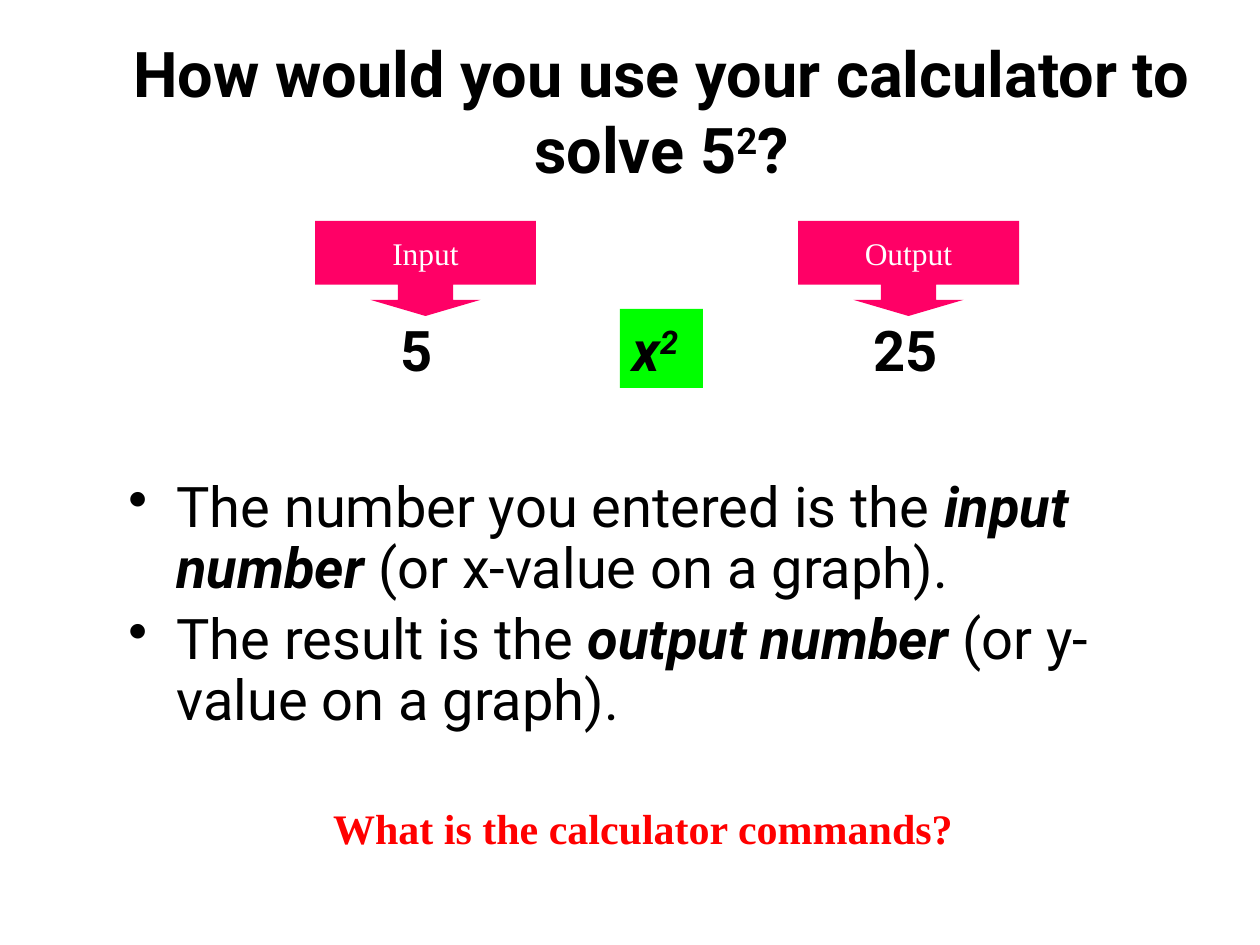
import dataclasses

import lxml.etree
import pptx
import pptx.dml.color
import pptx.enum.shapes
import pptx.enum.text
import pptx.oxml.ns
import pptx.util


@dataclasses.dataclass(frozen=True)
class Theme:
    black: str = "000000"
    white: str = "FFFFFF"
    red: str = "FF0000"
    green: str = "00FF00"
    pink: str = "FF0066"
    sans: str = "Roboto"
    serif: str = "Times New Roman"
    title_size: int = 36
    body_size: int = 32
    question_size: int = 24
    label_size: int = 18


theme = Theme()
ALIGN = pptx.enum.text.PP_ALIGN
ANCHOR = pptx.enum.text.MSO_ANCHOR
SHAPE = pptx.enum.shapes.MSO_SHAPE


def px(*lengths):
    return [pptx.util.Emu(round(length * 914400 / 126)) for length in lengths]


def write(shape, paragraphs, font=theme.sans, size=theme.body_size, color=theme.black, bold=False,
          align=ALIGN.LEFT, anchor=ANCHOR.TOP, wrap=True, bullet=None):
    frame = shape.text_frame
    frame.auto_size = pptx.enum.text.MSO_AUTO_SIZE.NONE
    frame.word_wrap = wrap
    frame.vertical_anchor = anchor
    for index, runs in enumerate(paragraphs):
        paragraph = frame.add_paragraph() if index else frame.paragraphs[0]
        paragraph.alignment = align
        if bullet:
            properties = paragraph._p.get_or_add_pPr()
            indent = px(48)[0]
            properties.set("marL", str(indent))
            properties.set("indent", str(-indent))
            lxml.etree.SubElement(properties, pptx.oxml.ns.qn("a:buChar"), char=bullet)
            paragraph.line_spacing = 0.9
            paragraph.space_before = pptx.util.Pt(size * 0.2 if index else 0)
        for text, style in runs:
            run = paragraph.add_run()
            run.text = text
            run.font.name = font
            run.font.size = pptx.util.Pt(size)
            run.font.color.rgb = pptx.dml.color.RGBColor.from_string(color)
            run.font.bold = bold or "bold" in style
            run.font.italic = "italic" in style
            if "super" in style:
                run._r.get_or_add_rPr().set("baseline", "30000")


def add_filled(slide, kind, box, color):
    shape = slide.shapes.add_shape(kind, *px(*box))
    shape.shadow.inherit = False
    shape.fill.solid()
    shape.fill.fore_color.rgb = pptx.dml.color.RGBColor.from_string(color)
    shape.line.fill.background()
    return shape


presentation = pptx.Presentation()
presentation.slide_width, presentation.slide_height = px(1260, 945)
slide = presentation.slides.add_slide(presentation.slide_layouts[5])

title = slide.shapes.title
title.left, title.top, title.width, title.height = px(84, 32, 1155, 157)
write(title, [[("How would you use your calculator to solve 5", ""), ("2", "super"), ("?", "")]],
      size=theme.title_size, bold=True, align=ALIGN.CENTER, anchor=ANCHOR.MIDDLE)

for number, left, width in [("5", 388, 60), ("25", 861, 97)]:
    number_box = slide.shapes.add_textbox(*px(left, 309, width, 79))
    write(number_box, [[(number, "")]], bold=True, wrap=False)

square_key = add_filled(slide, SHAPE.RECTANGLE, (620, 309, 83, 79), theme.green)
write(square_key, [[("x", "italic"), ("2", "italic super")]], bold=True, wrap=False)

explanation = slide.shapes.add_textbox(*px(116, 473, 1071, 420))
write(explanation, [
    [("The number you entered is the ", ""), ("input number", "bold italic"),
     (" (or x-value on a graph).", "")],
    [("The result is the ", ""), ("output number", "bold italic"),
     (" (or y-value on a graph).", "")],
], bullet="•")

for label, left in [("Input", 315), ("Output", 798)]:
    callout = add_filled(slide, SHAPE.DOWN_ARROW_CALLOUT, (left, 221, 221, 95), theme.pink)
    for index, value in enumerate([0.58, 0.58, 0.17, 0.67]):
        callout.adjustments[index] = value
    write(callout, [[(label, "")]], font=theme.serif, size=theme.label_size, color=theme.white,
          align=ALIGN.CENTER, anchor=ANCHOR.MIDDLE, wrap=False)

question = slide.shapes.add_textbox(*px(212, 796, 862, 63))
write(question, [[("What is the calculator commands?", "")]], font=theme.serif,
      size=theme.question_size, color=theme.red, bold=True, align=ALIGN.CENTER)

presentation.save("out.pptx")
